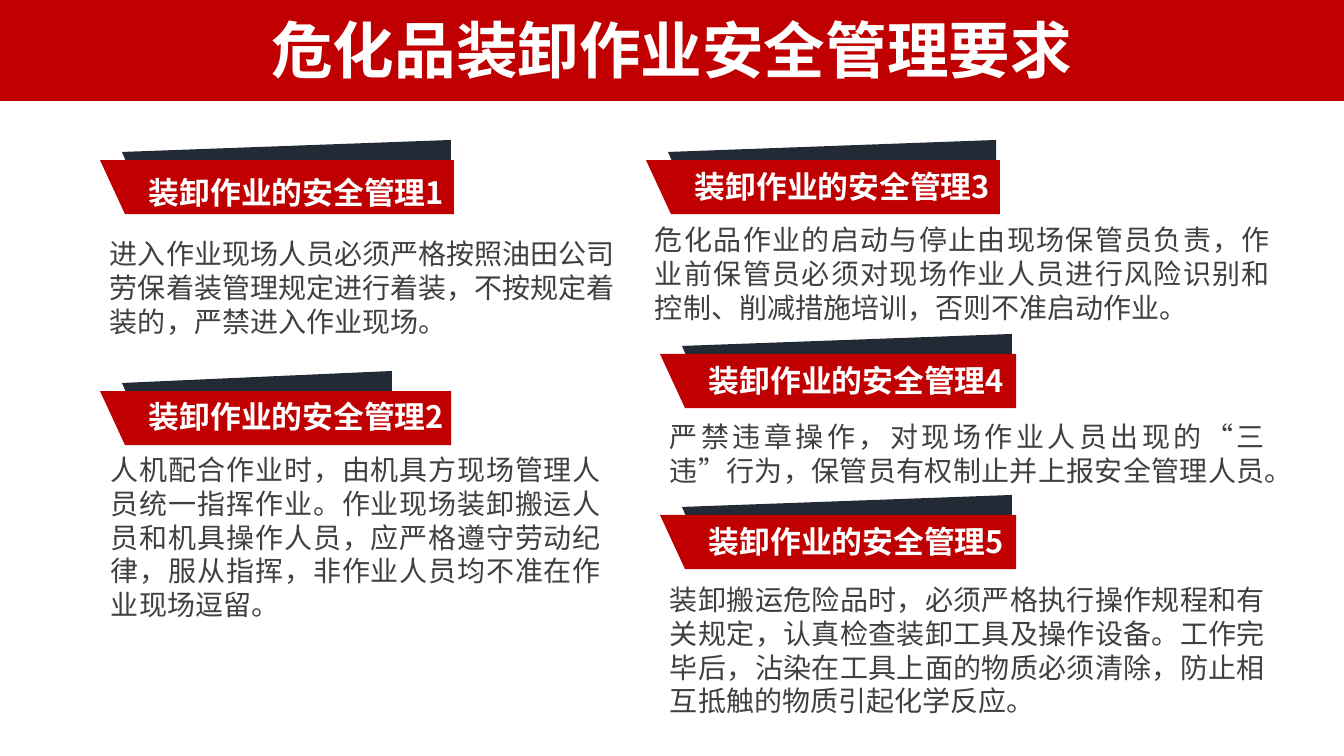
import pptx
import pptx.util
import pptx.dml.color
import pptx.enum.shapes
import pptx.enum.text
import pptx.oxml
import pptx.oxml.ns

RGB = pptx.dml.color.RGBColor
ALIGN = pptx.enum.text.PP_ALIGN
RED = RGB(0xC0, 0x00, 0x00)
NAVY = RGB(0x22, 0x2A, 0x35)
WHITE = RGB(0xFF, 0xFF, 0xFF)
GREY = RGB(0x40, 0x40, 0x40)

TITLE = "危化品装卸作业安全管理要求"
HEADING = "装卸作业的安全管理"
CARDS = [
    dict(x=100, y=160, right=454, back=451, head_y=166, body=(100, 229, 537, 112), align=ALIGN.LEFT,
         text="进入作业现场人员必须严格按照油田公司劳保着装管理规定进行着装，不按规定着装的，严禁进入作业现场。"),
    dict(x=100, y=391, right=451, back=392, head_y=390, body=(101, 445, 510, 179), align=ALIGN.JUSTIFY,
         text="人机配合作业时，由机具方现场管理人员统一指挥作业。作业现场装卸搬运人员和机具操作人员，"
              "应严格遵守劳动纪律，服从指挥，非作业人员均不准在作业现场逗留。"),
    dict(x=646, y=160, right=1000, back=996, head_y=160, body=(645, 215, 635, 112), align=ALIGN.JUSTIFY,
         text="危化品作业的启动与停止由现场保管员负责，作业前保管员必须对现场作业人员进行风险识别和控制、"
              "削减措施培训，否则不准启动作业。"),
    dict(x=660, y=354, right=1016, back=1012, head_y=354, body=(660, 412, 615, 78), align=ALIGN.JUSTIFY,
         text="严禁违章操作，对现场作业人员出现的“三违”行为，保管员有权制止并上报安全管理人员。"),
    dict(x=660, y=515, right=1016, back=1012, head_y=515, body=(660, 575, 615, 146), align=ALIGN.JUSTIFY,
         text="装卸搬运危险品时，必须严格执行操作规程和有关规定，认真检查装卸工具及操作设备。"
              "工作完毕后，沾染在工具上面的物质必须清除，防止相互抵触的物质引起化学反应。"),
]

FONT = "Noto Sans CJK SC"
TITLE_STYLE = dict(size=pptx.util.Pt(44), bold=True, name=FONT)
HEAD_STYLE = dict(size=pptx.util.Pt(22), bold=True, name=FONT)
BODY_STYLE = dict(size=pptx.util.Pt(20), bold=False, name=FONT)
SCALE = 914400 / 100.8
WIDTH, HEIGHT = 1344, 756


def px(n):
    return pptx.util.Emu(round(n * SCALE))


def paint(sp, color):
    sp.shadow.inherit = False
    sp.fill.solid()
    sp.fill.fore_color.rgb = color
    sp.line.fill.background()


def add_outline(slide, points, color):
    builder = slide.shapes.build_freeform(*points[0], scale=SCALE)
    builder.add_line_segments(points[1:], close=True)
    paint(builder.convert_to_shape(), color)


def add_text(slide, box, text, style, color, align, pitch):
    tf = slide.shapes.add_textbox(*map(px, box)).text_frame
    frame = dict(word_wrap=True, margin_left=px(10), margin_right=px(10),
                 margin_top=px(7), margin_bottom=px(5))
    for key, value in frame.items():
        setattr(tf, key, value)
    p = tf.paragraphs[0]
    p.alignment = align
    p.line_spacing = pptx.util.Pt(pitch)
    r = p.add_run()
    r.text = text
    for key, value in style.items():
        setattr(r.font, key, value)
    r.font.color.rgb = color
    ea = pptx.oxml.parse_xml(f'<a:ea {pptx.oxml.ns.nsdecls("a")} typeface="{FONT}"/>')
    r.font._element.append(ea)


def add_card(slide, number, card):
    x, y = card["x"], card["y"]
    right, back = card["right"], card["back"]
    add_outline(slide, [(x + 22, y - 8), (back, y - 20), (back, y + 33), (x + 45, y + 45)], NAVY)
    add_outline(slide, [(x, y), (right, y), (right, y + 54), (x + 25, y + 54)], RED)
    add_text(slide, (x + 39, card["head_y"], 384, 47), f"{HEADING}{number}",
             HEAD_STYLE, WHITE, ALIGN.LEFT, 26.6)
    add_text(slide, card["body"], card["text"], BODY_STYLE, GREY, card["align"], 24.2)


def main():
    prs = pptx.Presentation()
    prs.slide_width, prs.slide_height = px(WIDTH), px(HEIGHT)
    slide = prs.slides.add_slide(prs.slide_layouts[6])
    banner = slide.shapes.add_shape(pptx.enum.shapes.MSO_SHAPE.RECTANGLE, 0, 0, px(WIDTH), px(101))
    paint(banner, RED)
    add_text(slide, (0, 12, WIDTH, 78), TITLE, TITLE_STYLE, WHITE, ALIGN.CENTER, 48)
    for number, card in enumerate(CARDS, 1):
        add_card(slide, number, card)
    prs.save("out.pptx")


if __name__ == "__main__":
    main()
